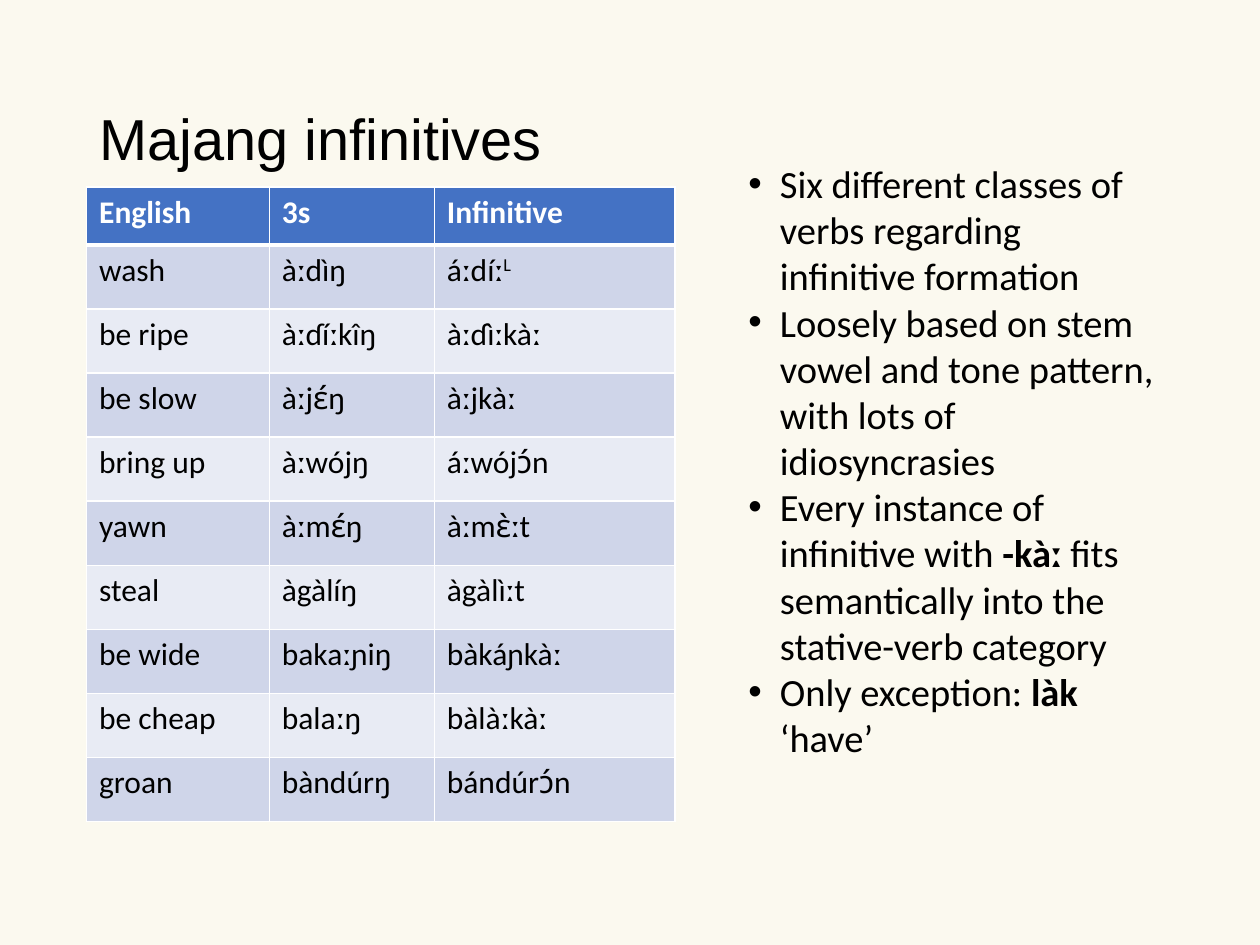
from dataclasses import dataclass

import lxml.etree
import pptx
import pptx.dml.color
import pptx.enum.text
import pptx.oxml.ns
import pptx.util

RGB = pptx.dml.color.RGBColor
CREAM = RGB(0xFB, 0xF9, 0xEF)
BLACK = RGB(0x00, 0x00, 0x00)
WHITE = RGB(0xFF, 0xFF, 0xFF)
BLUE = RGB(0x44, 0x72, 0xC4)
DARK = RGB(0xCF, 0xD5, 0xE9)
LIGHT = RGB(0xE8, 0xEB, 0xF4)

# The slide is a grid of 100 columns and 75 rows.
COLS, ROWS = 100, 75
WIDE, HIGH = pptx.util.Inches(10), pptx.util.Inches(7.5)
LEFT = 6.87
THIN, THICK = 0.96, 3
RAISE = "30000"

# Tone marks are typed as combining characters after the plain vowel.
GRAVE, ACUTE = "ɛ̀"[1], "ɛ́"[1]
TONES = (
    ("à", "a" + GRAVE), ("ì", "i" + GRAVE),
    ("á", "a" + ACUTE), ("í", "i" + ACUTE),
    ("ó", "o" + ACUTE), ("ú", "u" + ACUTE),
    ("î", "i" + "̂"),
)


@dataclass(frozen=True)
class Box:
    col: float
    row: float
    cols: float
    rows: float

    def place(self) -> tuple[int, int, int, int]:
        return across(self.col), down(self.row), across(self.cols), down(self.rows)


@dataclass(frozen=True)
class Verb:
    gloss: str
    third: str
    infin: str
    tone: str = ""


@dataclass(frozen=True)
class Point:
    text: str
    bold: str = ""
    rest: str = ""


TITLE = Box(LEFT, 4, 86.2, 14.5)
GRID = Box(LEFT, 14.85, 46.7, 50.35)
LIST = Box(58.4, 12.2, 34.7, 52.3)
WIDTHS = (14.5, 13.1, 19.1)
HEAD = 4.6

LABELS = Verb("English", "3s", "Infinitive")
VERBS = (
    Verb("wash", "àːdìŋ", "áːdíː", "L"),
    Verb("be ripe", "àːɗíːkîŋ", "àːɗìːkàː"),
    Verb("be slow", "àːjɛ́ŋ", "àːjkàː"),
    Verb("bring up", "àːwójŋ", "áːwójɔ́n"),
    Verb("yawn", "àːmɛ́ŋ", "àːmɛ̀ːt"),
    Verb("steal", "àgàlíŋ", "àgàlìːt"),
    Verb("be wide", "bakaːɲiŋ", "bàkáɲkàː"),
    Verb("be cheap", "balaːŋ", "bàlàːkàː"),
    Verb("groan", "bàndúrŋ", "bándúrɔ́n"),
)
POINTS = (
    Point("Six different classes of verbs regarding infinitive formation"),
    Point("Loosely based on stem vowel and tone pattern, with lots of idiosyncrasies"),
    Point("Every instance of infinitive with ", "-kàː",
          " fits semantically into the stative-verb category"),
    Point("Only exception: ", "làk", " ‘have’"),
)


def across(cols: float) -> int:
    return round(WIDE * cols / COLS)


def down(rows: float) -> int:
    return round(HIGH * rows / ROWS)


def split(text: str) -> str:
    """Write each toned vowel as a plain vowel and a combining mark."""
    for vowel, parts in TONES:
        text = text.replace(vowel, parts)
    return text


def style(para, size: float, face: str, color: RGB, bold: bool = False) -> None:
    font = para.font
    font.size, font.name, font.bold = pptx.util.Pt(size), face, bold
    font.color.rgb = color


def put(shape, box: Box) -> None:
    shape.left, shape.top, shape.width, shape.height = box.place()


def edge(cell, base: float) -> None:
    """Draw white borders round a cell, with the given width at its base."""
    qn = pptx.oxml.ns.qn
    props = cell._tc.get_or_add_tcPr()
    for spot, side in enumerate("LRTB"):
        line = lxml.etree.Element(qn(f"a:ln{side}"))
        line.set("w", str(pptx.util.Pt(base if side == "B" else THIN)))
        fill = lxml.etree.SubElement(line, qn("a:solidFill"))
        lxml.etree.SubElement(fill, qn("a:srgbClr")).set("val", str(WHITE))
        props.insert(spot, line)


def add_row(table, row: int, verb: Verb) -> None:
    top = row == 0
    shade = BLUE if top else DARK if row % 2 else LIGHT
    for col, text in enumerate((verb.gloss, verb.third, verb.infin)):
        cell = table.cell(row, col)
        cell.fill.solid()
        cell.fill.fore_color.rgb = shade
        edge(cell, THICK if top else THIN)
        para = cell.text_frame.paragraphs[0]
        style(para, 18, "Calibri", WHITE if top else BLACK, top)
        para.add_run().text = split(text)
    if verb.tone:
        run = para.add_run()
        run.text = verb.tone
        run._r.get_or_add_rPr().set("baseline", RAISE)


def add_grid(slide) -> None:
    count = len(VERBS) + 1
    table = slide.shapes.add_table(count, len(WIDTHS), *GRID.place()).table
    for col, width in zip(table.columns, WIDTHS):
        col.width = across(width)
    for row, verb in enumerate((LABELS, *VERBS)):
        table.rows[row].height = down((GRID.rows - HEAD) / len(VERBS) if row else HEAD)
        add_row(table, row, verb)


def fill_title(shape) -> None:
    put(shape, TITLE)
    frame = shape.text_frame
    frame.text = "Majang infinitives"
    frame.vertical_anchor = pptx.enum.text.MSO_ANCHOR.MIDDLE
    para = frame.paragraphs[0]
    para.alignment = pptx.enum.text.PP_ALIGN.LEFT
    para.line_spacing = 0.9
    style(para, 33, "Arial", BLACK)


def fill_list(shape) -> None:
    put(shape, LIST)
    frame = shape.text_frame
    frame.auto_size = pptx.enum.text.MSO_AUTO_SIZE.SHAPE_TO_FIT_TEXT
    for spot, point in enumerate(POINTS):
        para = frame.add_paragraph() if spot else frame.paragraphs[0]
        para.space_before = pptx.util.Pt(0)
        props = para._p.get_or_add_pPr()
        props.set("marL", str(across(2.5)))
        props.set("indent", str(-across(2.5)))
        style(para, 22, "Calibri", BLACK)
        for text in filter(None, (point.text, point.bold, point.rest)):
            run = para.add_run()
            run.text = text
            if text == point.bold:
                run.font.bold = True


def main() -> None:
    deck = pptx.Presentation()
    deck.slide_width, deck.slide_height = WIDE, HIGH
    slide = deck.slides.add_slide(deck.slide_layouts[1])
    slide.background.fill.solid()
    slide.background.fill.fore_color.rgb = CREAM
    fill_title(slide.shapes.title)
    add_grid(slide)
    fill_list(slide.placeholders[1])
    deck.save("out.pptx")


if __name__ == "__main__":
    main()
